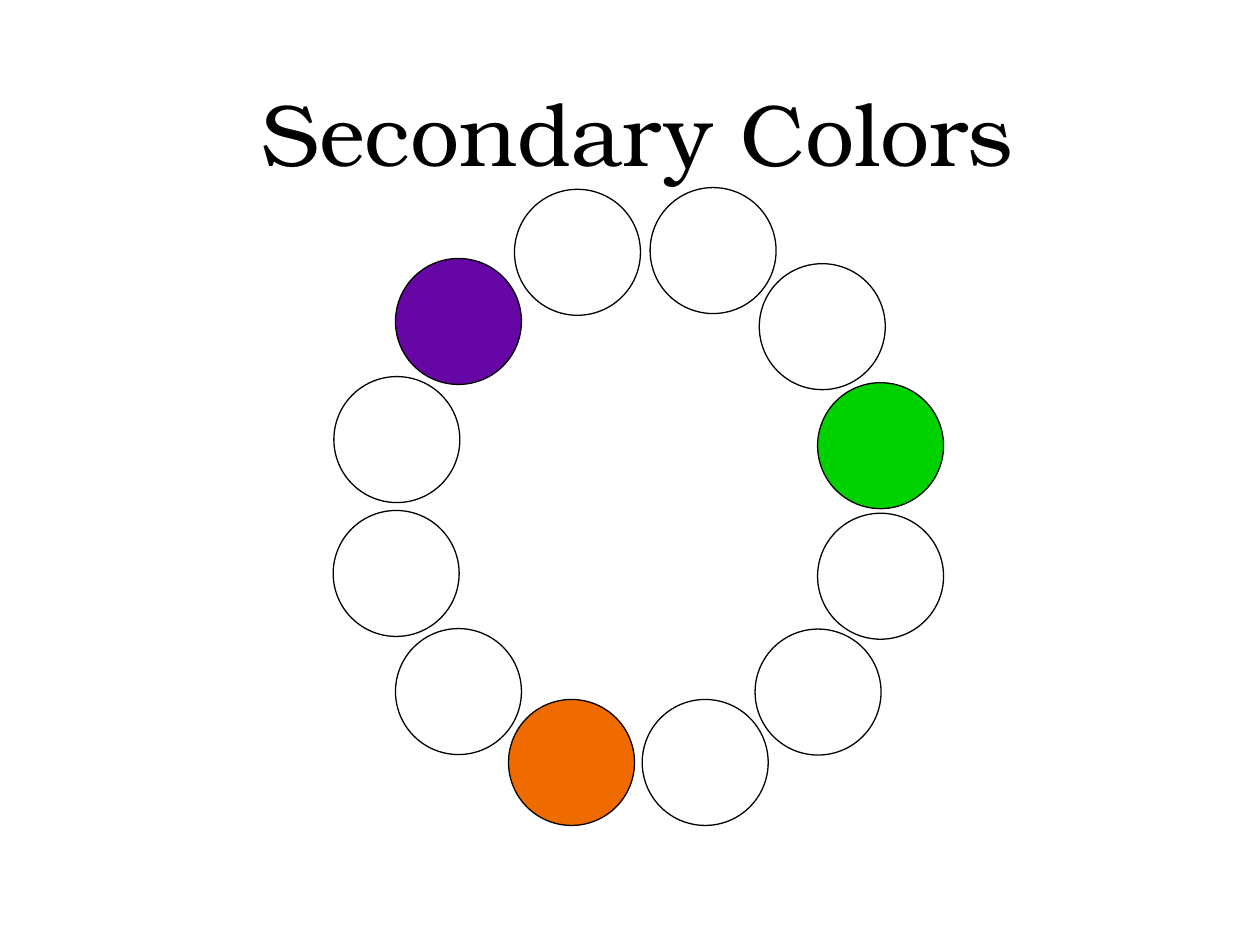
from dataclasses import dataclass

from pptx import Presentation
from pptx.dml.color import RGBColor
from pptx.enum import shapes, text
from pptx.util import Pt


@dataclass(frozen=True)
class Theme:
    """Colours, font and sizes of the slide."""
    ink: str = "000000"
    green: str = "00D200"
    orange: str = "EF6B00"
    violet: str = "6607A5"
    font: str = "TeX Gyre Bonum"
    title: int = 50
    line: float = 0.75


THEME = Theme()
DIAMETER = 72
WHEEL = [
    (371.5, 107.2, None),
    (433.9, 150.7, None),
    (467.2, 218.7, THEME.green),
    (467.2, 293.3, None),
    (431.5, 359.5, None),
    (367, 399.7, None),
    (290.6, 399.7, THEME.orange),
    (226, 359.2, None),
    (190.4, 291.7, None),
    (190.8, 215.2, None),
    (226, 147.7, THEME.violet),
    (294, 108.2, None),
]


def add_circle(parent, left, top, color):
    """Add one outlined circle of the wheel, filled when it has a colour."""
    s = parent.add_shape(shapes.MSO_SHAPE.OVAL, Pt(left), Pt(top), Pt(DIAMETER), Pt(DIAMETER))
    s.shadow.inherit = False
    if color:
        s.fill.solid()
        s.fill.fore_color.rgb = RGBColor.from_string(color)
    else:
        s.fill.background()
    s.line.color.rgb = RGBColor.from_string(THEME.ink)
    s.line.width = Pt(THEME.line)


def add_text(parent, content, *, left, top, width, height, size, color, inset=3):
    """Add a centred, wrapping text box."""
    tf = parent.add_textbox(Pt(left), Pt(top), Pt(width), Pt(height)).text_frame
    tf.word_wrap = True
    tf.vertical_anchor = text.MSO_ANCHOR.TOP
    tf.margin_left = tf.margin_top = tf.margin_right = tf.margin_bottom = Pt(inset)
    p = tf.paragraphs[0]
    p.alignment = text.PP_ALIGN.CENTER
    r = p.add_run()
    r.text = content
    r.font.name = THEME.font
    r.font.size = Pt(size)
    r.font.color.rgb = RGBColor.from_string(color)


def main():
    """Build the colour wheel slide and save it."""
    prs = Presentation()
    prs.slide_width, prs.slide_height = Pt(720), Pt(540)
    slide = prs.slides.add_slide(prs.slide_layouts[6])
    group = slide.shapes.add_group_shape().shapes
    for left, top, color in WHEEL:
        add_circle(group, left, top, color)
    add_text(group, "Secondary Colors", left=90, top=42, width=549, height=86.4,
             size=THEME.title, color=THEME.ink)
    prs.save("out.pptx")


if __name__ == "__main__":
    main()
